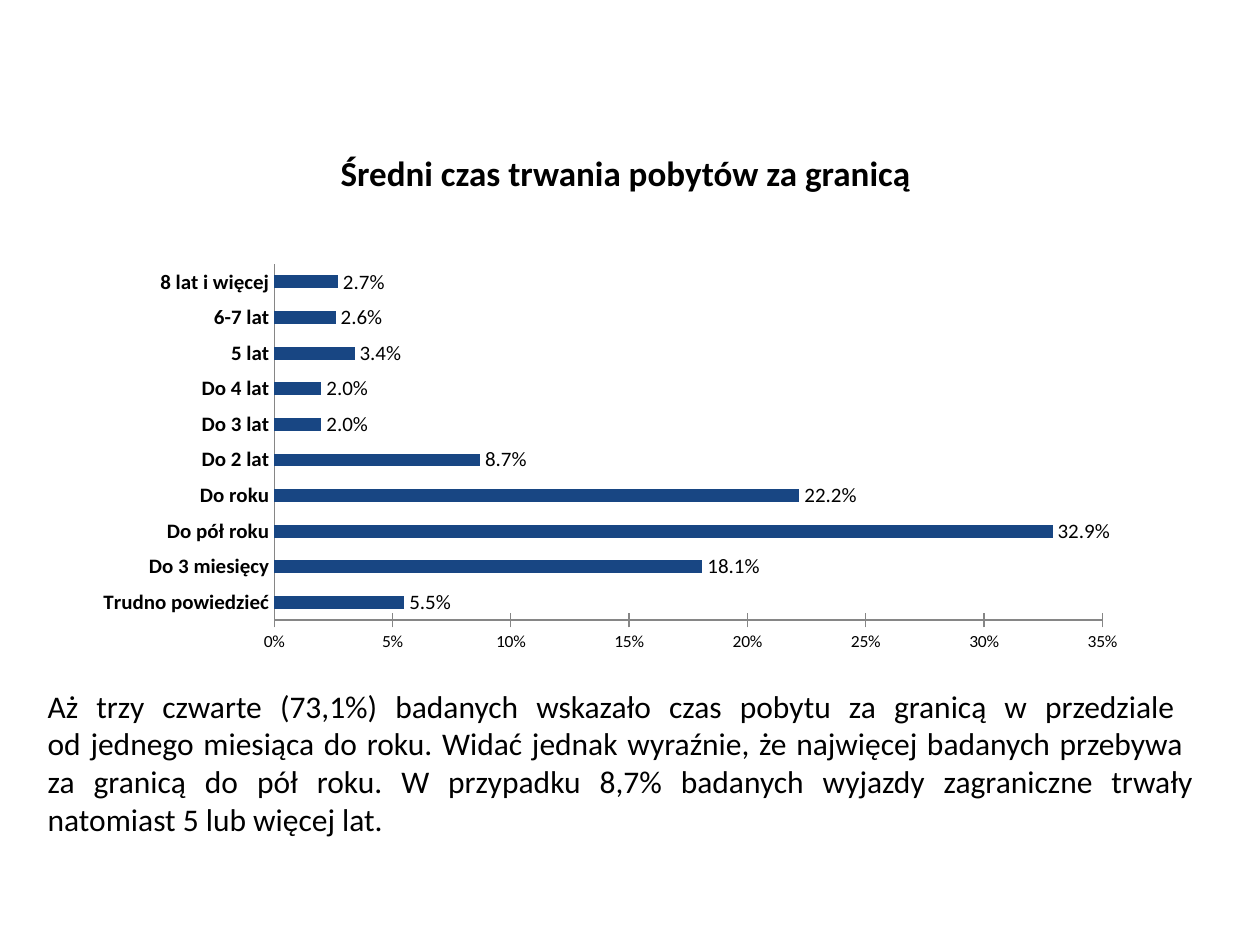
from dataclasses import dataclass

from lxml import etree
from pptx import Presentation
from pptx.chart.data import CategoryChartData
from pptx.dml.color import RGBColor
from pptx.enum import chart as chart_enum
from pptx.enum import text as text_enum
from pptx.oxml import parse_xml
from pptx.oxml.ns import nsdecls
from pptx.util import Inches, Pt

FONT = "Calibri"
COLORS = {"text": "000000", "bar": "184683", "axis": "868686"}

TITLE = "Średni czas trwania pobytów za granicą"
COMMENT = (
    "Aż trzy czwarte (73,1%) badanych wskazało czas pobytu za granicą w przedziale \v"
    "od jednego miesiąca do roku. Widać jednak wyraźnie, że najwięcej badanych przebywa \v"
    "za granicą do pół roku. W przypadku 8,7% badanych wyjazdy zagraniczne trwały "
    "natomiast 5 lub więcej lat."
)


@dataclass(frozen=True)
class Box:
    left: float
    top: float
    width: float
    height: float

    def lengths(self):
        return [Inches(v) for v in (self.left, self.top, self.width, self.height)]


@dataclass(frozen=True)
class Stay:
    duration: str
    share: float


STAYS = [
    Stay("Trudno powiedzieć", 0.055),
    Stay("Do 3 miesięcy", 0.181),
    Stay("Do pół roku", 0.329),
    Stay("Do roku", 0.222),
    Stay("Do 2 lat", 0.087),
    Stay("Do 3 lat", 0.02),
    Stay("Do 4 lat", 0.02),
    Stay("5 lat", 0.034),
    Stay("6-7 lat", 0.026),
    Stay("8 lat i więcej", 0.027),
]


def style_font(font, size: float, bold: bool = False) -> None:
    font.name = FONT
    font.size = Pt(size)
    font.bold = bold
    font.color.rgb = RGBColor.from_string(COLORS["text"])


def fill_text(shape, content: str, size: float, alignment, bold: bool = False) -> None:
    frame = shape.text_frame
    frame.text = content
    frame.word_wrap = True
    frame.auto_size = text_enum.MSO_AUTO_SIZE.SHAPE_TO_FIT_TEXT
    frame.vertical_anchor = text_enum.MSO_ANCHOR.TOP
    paragraph = frame.paragraphs[0]
    paragraph.alignment = alignment
    for run in paragraph.runs:
        style_font(run.font, size, bold)


def set_plot_layout(chart, x: float, y: float, width: float, height: float) -> None:
    """Fix the inner plot area, in fractions of the chart."""
    plot_area = chart.plots[0]._element.getparent()
    for old in plot_area.findall("{*}layout"):
        plot_area.remove(old)
    layout = parse_xml(f"<c:layout {nsdecls('c')}><c:manualLayout/></c:layout>")
    values = {"layoutTarget": "inner", "xMode": "edge", "yMode": "edge",
              "x": x, "y": y, "w": width, "h": height}
    for name, value in values.items():
        tag = layout[0].tag.replace("manualLayout", name)
        etree.SubElement(layout[0], tag).set("val", str(value))
    plot_area.insert(0, layout)


def style_axis(axis, size: float, tick, bold: bool = False) -> None:
    axis.has_major_gridlines = False
    axis.major_tick_mark = tick
    axis.minor_tick_mark = chart_enum.XL_TICK_MARK.NONE
    axis.format.line.color.rgb = RGBColor.from_string(COLORS["axis"])
    axis.format.line.width = Pt(0.75)
    style_font(axis.tick_labels.font, size, bold)


def add_stay_chart(slide, box: Box) -> None:
    data = CategoryChartData(number_format="0.0%")
    data.categories = [stay.duration for stay in STAYS]
    data.add_series("Series 1", [stay.share for stay in STAYS])
    chart = slide.shapes.add_chart(
        chart_enum.XL_CHART_TYPE.BAR_CLUSTERED, *box.lengths(), data
    ).chart
    chart.has_legend = False
    chart.has_title = False
    style_font(chart.font, 10)
    set_plot_layout(chart, 0.2, 0.05, 0.72, 0.9)

    style_axis(chart.category_axis, 12, chart_enum.XL_TICK_MARK.NONE, bold=True)
    value_axis = chart.value_axis
    style_axis(value_axis, 10, chart_enum.XL_TICK_MARK.CROSS)
    value_axis.minimum_scale = 0
    value_axis.maximum_scale = 0.35
    value_axis.major_unit = 0.05
    value_axis.tick_labels.number_format = "0%"
    value_axis.tick_labels.number_format_is_linked = False

    plot = chart.plots[0]
    plot.vary_by_categories = False
    plot.gap_width = 175
    plot.overlap = -25
    fill = plot.series[0].format.fill
    fill.solid()
    fill.fore_color.rgb = RGBColor.from_string(COLORS["bar"])

    plot.has_data_labels = True
    labels = plot.data_labels
    labels.show_value = True
    labels.number_format = "0.0%"
    labels.number_format_is_linked = False
    labels.position = chart_enum.XL_LABEL_POSITION.OUTSIDE_END
    style_font(labels.font, 12)


def main() -> None:
    presentation = Presentation()
    presentation.slide_width = Inches(10)
    presentation.slide_height = Inches(7.5)
    slide = presentation.slides.add_slide(presentation.slide_layouts[5])

    title = slide.shapes.title
    title.left, title.top, title.width, title.height = Box(0.28, 1.15, 9.37, 0.44).lengths()
    fill_text(title, TITLE, 20, text_enum.PP_ALIGN.CENTER, bold=True)

    comment = slide.shapes.add_textbox(*Box(0.28, 5.4, 9.29, 1.31).lengths())
    fill_text(comment, COMMENT, 18, text_enum.PP_ALIGN.JUSTIFY)

    add_stay_chart(slide, Box(0.35, 1.94, 9.13, 3.23))
    presentation.save("out.pptx")


if __name__ == "__main__":
    main()
